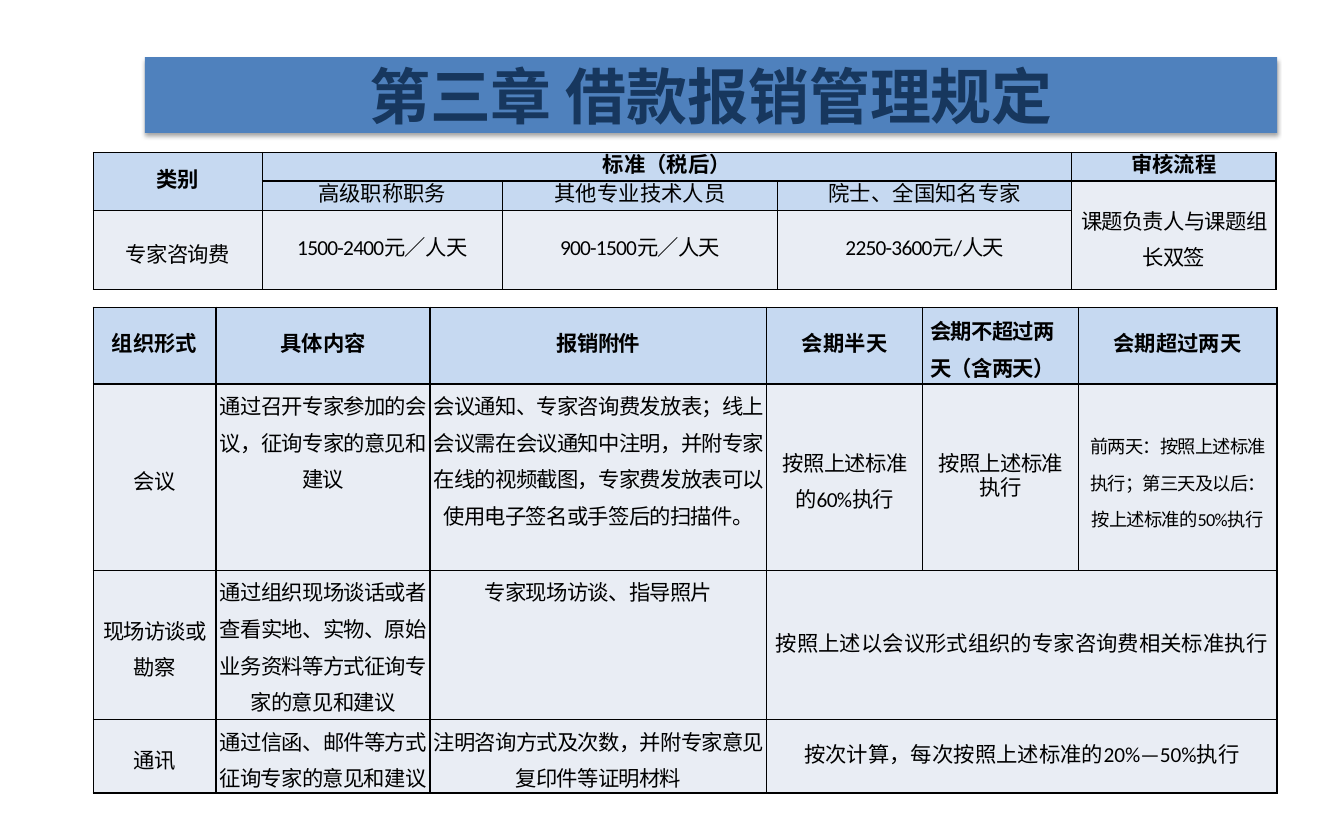
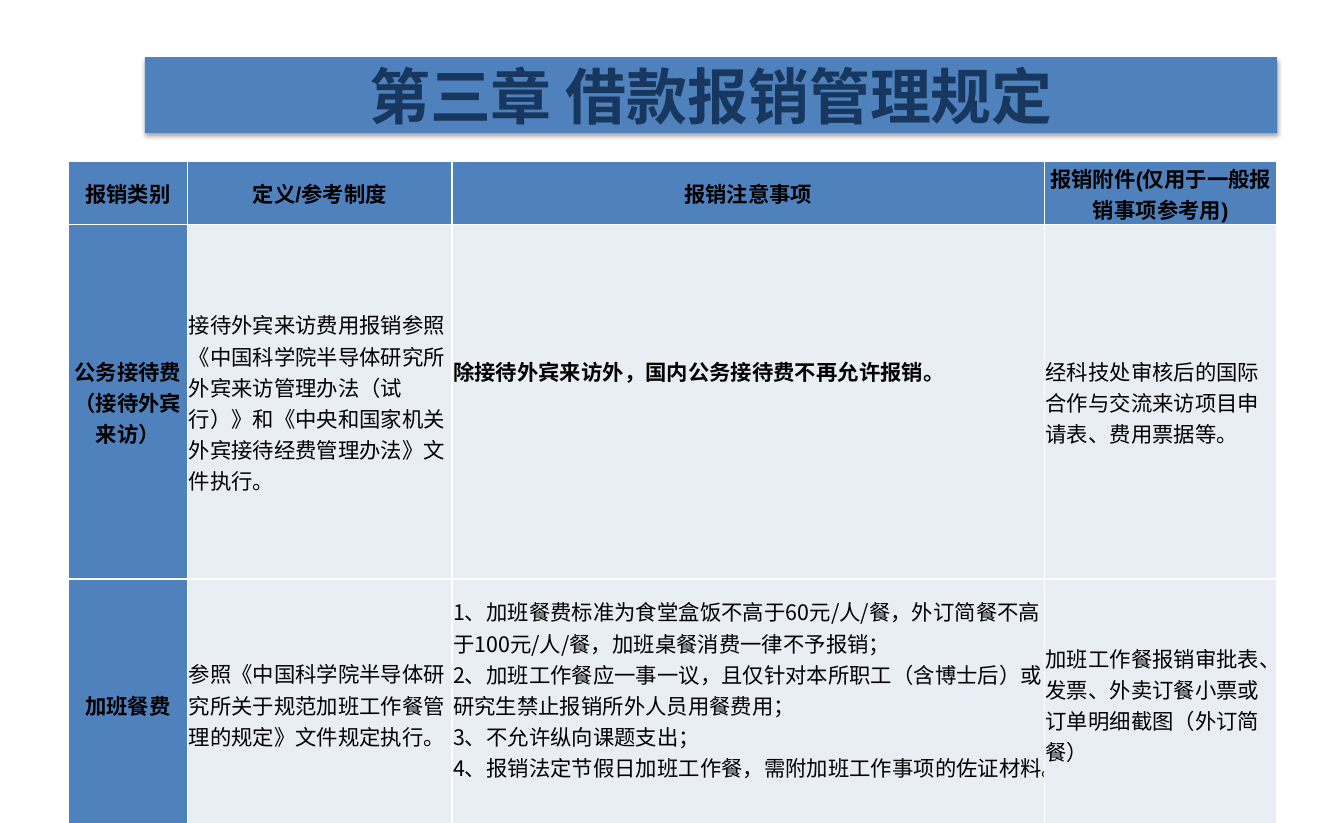
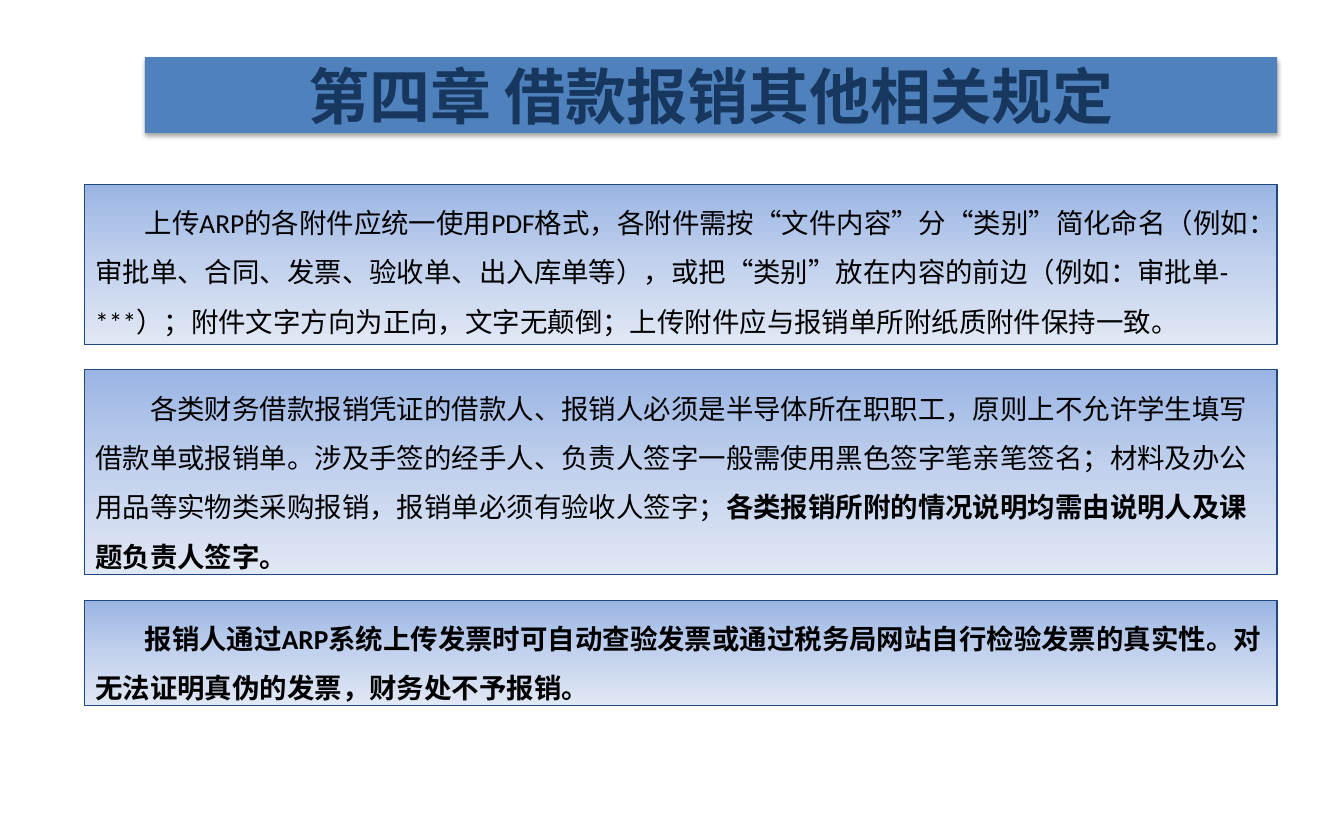
from dataclasses import dataclass
from functools import partial

from lxml import etree
from pptx import Presentation
from pptx.dml.color import RGBColor
from pptx.enum.shapes import MSO_SHAPE
from pptx.enum.text import MSO_ANCHOR, MSO_AUTO_SIZE, PP_ALIGN
from pptx.oxml import parse_xml
from pptx.oxml.ns import nsdecls, qn
from pptx.util import Inches, Pt


@dataclass(frozen=True)
class Theme:
    """Colours, fonts and type sizes of the deck."""
    band: str = "4F81BD"
    navy: str = "17375E"
    text: str = "000000"
    white: str = "FFFFFF"
    head: str = "C6D9F1"
    body: str = "E9EDF4"
    outline: str = "1F497D"
    panel: tuple = ((0, "9AB5E4"), (50, "C2D1ED"), (100, "E1E8F5"))
    cjk: str = "Noto Sans CJK SC"
    latin: str = "Calibri"
    sans: str = "Arial"
    title_size: float = 40
    panel_size: float = 18
    cell_size: float = 14
    small_size: float = 12


T = Theme()
RIGHT = 11.64


@dataclass
class Cell:
    """Text and look of one table cell; each line of text is a paragraph."""
    text: str
    fill: str = T.body
    bold: bool = False
    font: str = T.latin
    size: float = T.cell_size
    spc: float = 0
    pitch: float = 0
    align: PP_ALIGN = PP_ALIGN.CENTER
    anchor: MSO_ANCHOR = MSO_ANCHOR.MIDDLE
    pads: tuple = (0.07, 0, 0.07, 0)
    span: tuple = (1, 1)


head = partial(Cell, fill=T.head, bold=True, pitch=15.8)
subhead = partial(Cell, fill=T.head, pitch=15.8)
single = partial(Cell, pitch=15.8)
spaced = partial(Cell, pitch=24, spc=-0.5)
detail = partial(spaced, anchor=MSO_ANCHOR.TOP, pads=(0, 0, 0, 0))

PADS = (0.01, 0.01, 0.01, 0)
label = partial(Cell, fill=T.band, bold=True, font=T.cjk, pads=PADS)
column = partial(label, font=T.sans)
note = partial(Cell, font=T.cjk, align=PP_ALIGN.LEFT, pads=PADS)


def add_run(p, text, size, font=T.latin, color=T.text, bold=False, spc=0):
    """Append one formatted run to a paragraph."""
    r = p.add_run()
    r.text = text
    r.font.size = Pt(size)
    r.font.bold = bold
    r.font.color.rgb = RGBColor.from_string(color)
    r.font.name = font
    rPr = r.font._element
    etree.SubElement(rPr, qn("a:ea")).set("typeface", T.cjk)
    if spc:
        rPr.set("spc", str(int(spc * 100)))


def add_slide(prs, title):
    """Add a slide with the shadowed title band."""
    s = prs.slides.add_slide(prs.slide_layouts[5])
    sp = s.shapes.title
    sp.left, sp.top = Inches(1.32), Inches(0.52)
    sp.width, sp.height = Inches(RIGHT - 1.32), Inches(0.69)
    sp.fill.solid()
    sp.fill.fore_color.rgb = RGBColor.from_string(T.band)
    sp._element.spPr.append(parse_xml(
        f'<a:effectLst {nsdecls("a")}><a:outerShdw blurRad="{Pt(3.1)}" dist="{Pt(1.8)}" '
        'dir="5400000" rotWithShape="0"><a:srgbClr val="000000"><a:alpha val="35000"/>'
        '</a:srgbClr></a:outerShdw></a:effectLst>'))
    tf = sp.text_frame
    tf.auto_size = MSO_AUTO_SIZE.NONE
    tf.vertical_anchor = MSO_ANCHOR.MIDDLE
    p = tf.paragraphs[0]
    p.alignment = PP_ALIGN.CENTER
    add_run(p, title, T.title_size, T.cjk, T.navy, True)
    return s


def set_borders(cell, color):
    """Draw a 1 pt border on all four sides of a cell."""
    tcPr = cell._tc.get_or_add_tcPr()
    for side in ("lnL", "lnR", "lnT", "lnB"):
        tcPr.append(parse_xml(
            f'<a:{side} {nsdecls("a")} w="{Pt(1)}"><a:solidFill>'
            f'<a:srgbClr val="{color}"/></a:solidFill></a:{side}>'))


def fill_cell(cell, c):
    """Write a Cell into a table cell."""
    cell.fill.solid()
    cell.fill.fore_color.rgb = RGBColor.from_string(c.fill)
    cell.vertical_anchor = c.anchor
    (cell.margin_left, cell.margin_top,
     cell.margin_right, cell.margin_bottom) = map(Inches, c.pads)
    tf = cell.text_frame
    for i, line in enumerate(c.text.split("\n")):
        p = tf.add_paragraph() if i else tf.paragraphs[0]
        p.alignment = c.align
        if c.pitch:
            p.line_spacing = Pt(c.pitch)
        add_run(p, line, c.size, c.font, bold=c.bold, spc=c.spc)


def add_grid(s, left, top, cols, rows, cells, border):
    """Add a table; None marks a cell covered by a merge."""
    tbl = s.shapes.add_table(len(rows), len(cols), Inches(left), Inches(top),
                             Inches(sum(cols)), Inches(sum(rows))).table
    tbl.first_row = tbl.horz_banding = False
    for col, width in zip(tbl.columns, cols):
        col.width = Inches(width)
    for row, height in zip(tbl.rows, rows):
        row.height = Inches(height)
    for i, line in enumerate(cells):
        for j, c in enumerate(line):
            cell = tbl.cell(i, j)
            set_borders(cell, border)
            if c is None:
                continue
            if c.span != (1, 1):
                cell.merge(tbl.cell(i + c.span[0] - 1, j + c.span[1] - 1))
            fill_cell(cell, c)


def add_panel(s, top, height, indent, runs):
    """Add a gradient panel holding one indented paragraph."""
    sp = s.shapes.add_shape(MSO_SHAPE.RECTANGLE, Inches(0.77), Inches(top),
                            Inches(RIGHT - 0.77), Inches(height))
    sp.shadow.inherit = False
    stops = "".join(f'<a:gs pos="{pos * 1000}"><a:srgbClr val="{color}"/></a:gs>'
                    for pos, color in T.panel)
    sp._element.spPr.find(qn("a:prstGeom")).addnext(parse_xml(
        f'<a:gradFill {nsdecls("a")} rotWithShape="1"><a:gsLst>{stops}</a:gsLst>'
        '<a:lin ang="5400000" scaled="0"/></a:gradFill>'))
    sp.line.color.rgb = RGBColor.from_string(T.outline)
    sp.line.width = Pt(0.75)
    tf = sp.text_frame
    tf.word_wrap = True
    tf.auto_size = MSO_AUTO_SIZE.SHAPE_TO_FIT_TEXT
    tf.vertical_anchor = MSO_ANCHOR.TOP
    p = tf.paragraphs[0]
    p.alignment = PP_ALIGN.LEFT
    p.line_spacing = 1.5
    p._p.get_or_add_pPr().set("indent", str(Inches(indent)))
    for text, bold in runs:
        add_run(p, text, T.panel_size, bold=bold)


def build_consulting(prs):
    """Expert consulting fees: standards and forms."""
    s = add_slide(prs, "第三章 借款报销管理规定")
    add_grid(s, 0.85, 1.39, (1.54, 2.19, 2.51, 2.68, 1.86), (0.26, 0.27, 0.72), [
        [head("类别", span=(2, 1)), head("标准（税后）", span=(1, 3)), None, None,
         head("审核流程")],
        [None, subhead("高级职称职务"), subhead("其他专业技术人员"),
         subhead("院士、全国知名专家"),
         spaced("课题负责人与课题组长双签", span=(2, 1))],
        [spaced("专家咨询费"), single("1500-2400元／人天", spc=-0.5),
         single("900-1500元／人天", spc=-0.5), single("2250-3600元/人天", spc=-0.5), None],
    ], T.text)
    flush = (0, 0, 0, 0)
    add_grid(s, 0.85, 2.8, (1.12, 1.95, 3.07, 1.42, 1.42, 1.81), (0.7, 1.7, 1.36, 0.66), [
        [head("组织形式"), head("具体内容", pads=flush),
         head("报销附件", pads=flush, spc=-0.5), head("会期半天"),
         head("会期不超过两天（含两天）", pitch=24, spc=-0.5, align=PP_ALIGN.LEFT),
         head("会期超过两天")],
        [spaced("会议"), detail("通过召开专家参加的会议，征询专家的意见和建议"),
         detail("会议通知、专家咨询费发放表；线上会议需在会议通知中注明，并附专家在线的"
                "视频截图，专家费发放表可以使用电子签名或手签后的扫描件。"),
         spaced("按照上述标准的60%执行"), single("按照上述标准执行", spc=-0.5),
         spaced("前两天：按照上述标准执行；第三天及以后：按上述标准的50%执行",
                size=T.small_size)],
        [spaced("现场访谈或勘察"),
         detail("通过组织现场谈话或者查看实地、实物、原始业务资料等方式征询专家的意见和建议"),
         detail("专家现场访谈、指导照片"),
         single("按照上述以会议形式组织的专家咨询费相关标准执行", span=(1, 3)), None, None],
        [spaced("通讯"), detail("通过信函、邮件等方式征询专家的意见和建议"),
         detail("注明咨询方式及次数，并附专家意见复印件等证明材料"),
         single("按次计算，每次按照上述标准的20%—50%执行", span=(1, 3)), None, None],
    ], T.text)


def build_hospitality(prs):
    """Reception and overtime meal rules."""
    s = add_slide(prs, "第三章 借款报销管理规定")
    add_grid(s, 0.62, 1.47, (1.09, 2.41, 5.4, 2.12), (0.57, 3.23, 2.28), [
        [column("报销类别"), column("定义/参考制度"), column("报销注意事项"),
         column("报销附件(仅用于一般报销事项参考用)")],
        [label("公务接待费（接待外宾来访）"),
         note("接待外宾来访费用报销参照《中国科学院半导体研究所外宾来访管理办法（试行）》和"
              "《中央和国家机关外宾接待经费管理办法》文件执行。"),
         note("除接待外宾来访外，国内公务接待费不再允许报销。", bold=True,
              pads=(0.01, 0.01, 0.01, 0.57)),
         note("经科技处审核后的国际合作与交流来访项目申请表、费用票据等。")],
        [label("加班餐费"),
         note("参照《中国科学院半导体研究所关于规范加班工作餐管理的规定》文件规定执行。"),
         note("1、加班餐费标准为食堂盒饭不高于60元/人/餐，外订简餐不高于100元/人/餐，"
              "加班桌餐消费一律不予报销；\n"
              "2、加班工作餐应一事一议，且仅针对本所职工（含博士后）或研究生禁止报销所外人员用餐费用；\n"
              "3、不允许纵向课题支出；\n"
              "4、报销法定节假日加班工作餐，需附加班工作事项的佐证材料。",
              pads=(0.01, 0.01, 0.01, 0.28)),
         note("加班工作餐报销审批表、发票、外卖订餐小票或订单明细截图（外订简餐）")],
    ], T.white)


def build_other_rules(prs):
    """Other reimbursement rules in three stacked panels."""
    s = add_slide(prs, "第四章 借款报销其他相关规定")
    panels = [
        (1.46, 0.45, [
            ("上传ARP的各附件应统一使用PDF格式，各附件需按“文件内容”分“类别”简化命名"
             "（例如：审批单、合同、发票、验收单、出入库单等），或把“类别”放在内容的前边"
             "（例如：审批单-***）；附件文字方向为正向，文字无颠倒；"
             "上传附件应与报销单所附纸质附件保持一致。", False)]),
        (1.87, 0.5, [
            ("各类财务借款报销凭证的借款人、报销人必须是半导体所在职职工，"
             "原则上不允许学生填写借款单或报销单。涉及手签的经手人、负责人签字一般需使用"
             "黑色签字笔亲笔签名；材料及办公用品等实物类采购报销，报销单必须有验收人签字；", False),
            ("各类报销所附的情况说明均需由说明人及课题负责人签字。", True)]),
        (0.96, 0.45, [
            ("报销人通过ARP系统上传发票时可自动查验发票或通过税务局网站自行检验发票的真实性。"
             "对无法证明真伪的发票，财务处不予报销。", True)]),
    ]
    top = 1.68
    for height, indent, runs in panels:
        add_panel(s, top, height, indent, runs)
        top += height + 0.23


def main():
    """Build and save the deck."""
    prs = Presentation()
    prs.slide_width, prs.slide_height = Inches(12.25), Inches(7.5)
    build_consulting(prs)
    build_hospitality(prs)
    build_other_rules(prs)
    prs.save("out.pptx")


if __name__ == "__main__":
    main()
